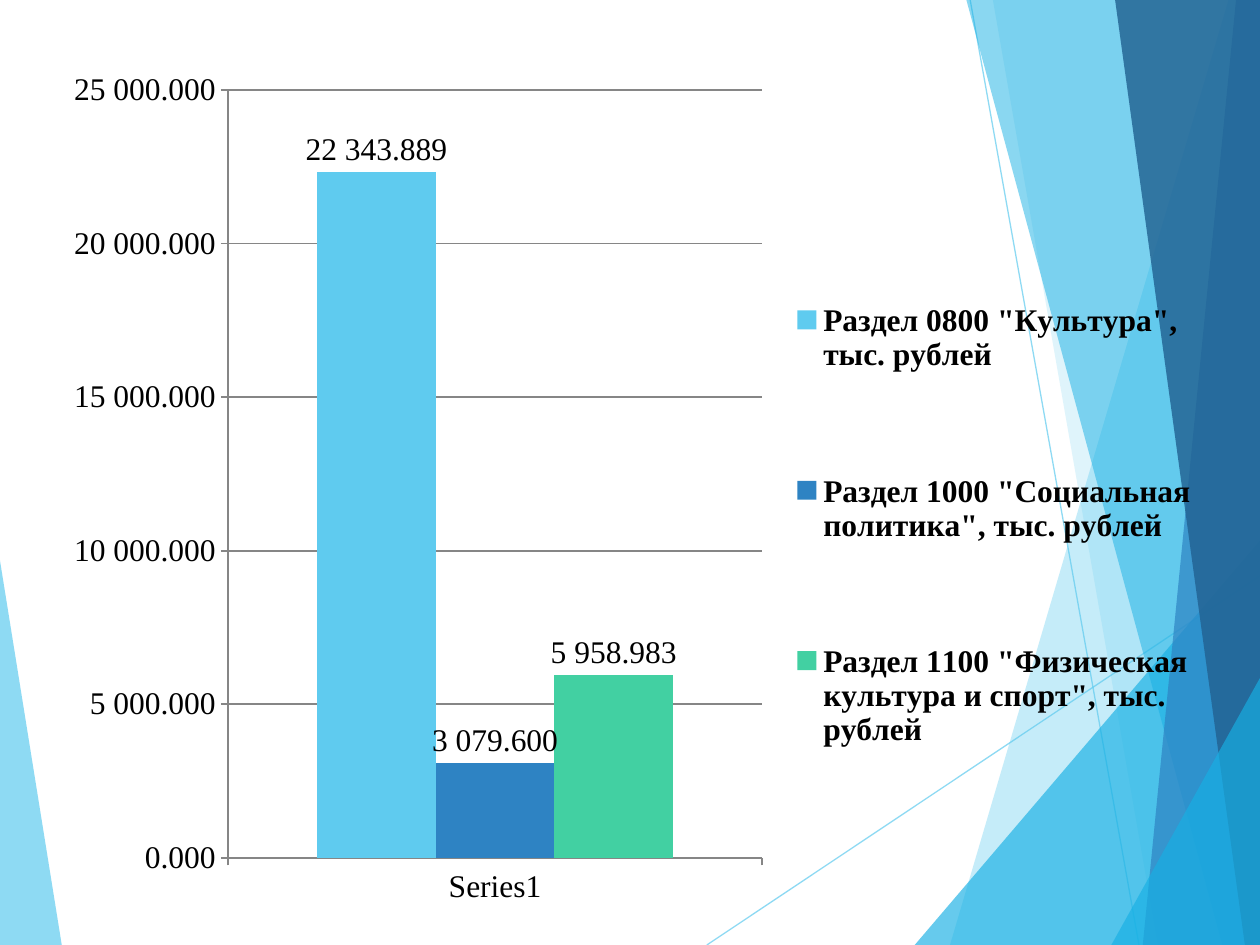
"""Build a slide with a column chart of budget sections over a faceted background."""
import pptx
import pptx.chart.data
import pptx.dml.color
import pptx.enum.chart
import pptx.oxml
import pptx.oxml.ns
import pptx.util
from lxml import etree

Inches = pptx.util.Inches
qn = pptx.oxml.ns.qn
FONT = "Times New Roman"
SKY, CYAN, BLUE, NAVY, GREEN, GRAY = "5FCBEF", "17B0E4", "2E83C3", "226292", "42D0A2", "868686"

FACETS = [
    ([(0, 4.45), (0.49, 7.5), (0, 7.5)], SKY, 70),
    ([(9.75, 0), (7.54, 7.5), (10, 7.5), (10, 0)], SKY, 36),
    ([(7.88, 0), (9.19, 7.5), (10, 7.5), (10, 0)], SKY, 20),
    ([(7.26, 7.5), (10, 4.29), (10, 7.5)], CYAN, 66),
    ([(7.67, 0), (9.7, 7.5), (10, 7.5), (10, 0)], CYAN, 50),
    ([(9.81, 0), (9.07, 7.5), (10, 7.5), (10, 0)], BLUE, 70),
    ([(8.85, 0), (9.88, 7.5), (10, 7.5), (10, 0)], NAVY, 82),
    ([(8.82, 7.5), (10, 5.38), (10, 7.5)], CYAN, 66),
]
RAYS = [((5.61, 7.5), (10, 4.57)), ((7.7, 0), (9.04, 7.5))]
SECTIONS = [
    ('Раздел 0800 "Культура", тыс. рублей', 22343.889, SKY),
    ('Раздел 1000 "Социальная политика", тыс. рублей', 3079.6, BLUE),
    ('Раздел 1100 "Физическая культура и спорт", тыс. рублей', 5958.983, GREEN),
]


def color(value):
    return pptx.dml.color.RGBColor.from_string(value)


def paint(fill, value, opacity=100):
    fill.solid()
    fill.fore_color.rgb = color(value)
    if opacity < 100:
        tint = fill._xPr.find(".//" + qn("a:srgbClr"))
        etree.SubElement(tint, qn("a:alpha")).set("val", str(opacity * 1000))


def format_text(font, size=18, bold=False, ink="000000"):
    font.name = FONT
    font.size = pptx.util.Pt(size)
    font.bold = bold
    font.color.rgb = color(ink)


def place(element, left, top, width, height, inner=False):
    for old in element.findall(qn("c:layout")):
        element.remove(old)
    layout = pptx.oxml.parse_xml(f'<c:layout {pptx.oxml.ns.nsdecls("c")}><c:manualLayout/></c:layout>')
    settings = [("layoutTarget", "inner")] if inner else []
    settings += [("xMode", "edge"), ("yMode", "edge"), ("x", left), ("y", top), ("w", width), ("h", height)]
    for name, value in settings:
        etree.SubElement(layout[0], qn("c:" + name)).set("val", str(value))
    return layout


class SlideBuilder:
    def __init__(self, slide):
        self.slide = slide

    def facet(self, points, fill, opacity):
        corners = [(Inches(x), Inches(y)) for x, y in points]
        builder = self.slide.shapes.build_freeform(*corners[0])
        builder.add_line_segments(corners[1:], close=True)
        shape = builder.convert_to_shape()
        shape.shadow.inherit = False
        shape.line.fill.background()
        paint(shape.fill, fill, opacity)

    def ray(self, start, end):
        ends = [Inches(value) for value in (*start, *end)]
        connector = self.slide.shapes.add_connector(pptx.enum.shapes.MSO_CONNECTOR.STRAIGHT, *ends)
        connector.line.width = pptx.util.Pt(0.75)
        paint(connector.line.fill, SKY, 70)
        etree.SubElement(connector._element.spPr, qn("a:effectLst"))

    def column_chart(self, sections, left, top, width, height):
        data = pptx.chart.data.CategoryChartData(number_format="#\\ ##0.000")
        data.categories = ["Series1"]
        for name, value, _ in sections:
            data.add_series(name, [value])
        kind = pptx.enum.chart.XL_CHART_TYPE.COLUMN_CLUSTERED
        box = [Inches(value) for value in (left, top, width, height)]
        chart = self.slide.shapes.add_chart(kind, *box, data).chart
        format_text(chart.font)
        chart.has_title = False
        self.style_axes(chart)
        self.style_legend(chart)
        plot = chart.plots[0]
        plot.gap_width = 150
        plot.overlap = 0
        plot.vary_by_categories = False
        for series, (_, _, fill) in zip(plot.series, sections):
            paint(series.format.fill, fill)
            labels = series.data_labels
            labels.show_value = True
            labels.position = pptx.enum.chart.XL_LABEL_POSITION.OUTSIDE_END
            format_text(labels.font)
        plot_area = chart._chartSpace.chart.plotArea
        plot_area.insert(0, place(plot_area, 0.15, 0.04, 0.46, 0.89, inner=True))

    def style_axes(self, chart):
        values = chart.value_axis
        values.minimum_scale, values.maximum_scale, values.major_unit = 0, 25000, 5000
        values.has_major_gridlines = True
        values.tick_labels.number_format = "#\\ ##0.000"
        values.tick_labels.number_format_is_linked = False
        for axis in (values, chart.category_axis):
            axis.major_tick_mark = pptx.enum.chart.XL_TICK_MARK.OUTSIDE
        for line in (values.format.line, chart.category_axis.format.line, values.major_gridlines.format.line):
            line.width = pptx.util.Pt(1)
            paint(line.fill, GRAY)

    def style_legend(self, chart):
        chart.has_legend = True
        legend = chart.legend
        legend.position = pptx.enum.chart.XL_LEGEND_POSITION.RIGHT
        legend.include_in_layout = False
        format_text(legend.font, bold=True)
        element = legend._element
        layout = place(element, 0.63, 0.17, 0.36, 0.75)
        element.find(qn("c:legendPos")).addnext(layout)


def main():
    presentation = pptx.Presentation()
    presentation.slide_width, presentation.slide_height = Inches(10), Inches(7.5)
    builder = SlideBuilder(presentation.slides.add_slide(presentation.slide_layouts[6]))
    builder.facet(*FACETS[0])
    for start, end in RAYS:
        builder.ray(start, end)
    for facet in FACETS[1:]:
        builder.facet(*facet)
    builder.column_chart(SECTIONS, 0.43, 0.44, 9.21, 6.85)
    presentation.save("out.pptx")


if __name__ == "__main__":
    main()
